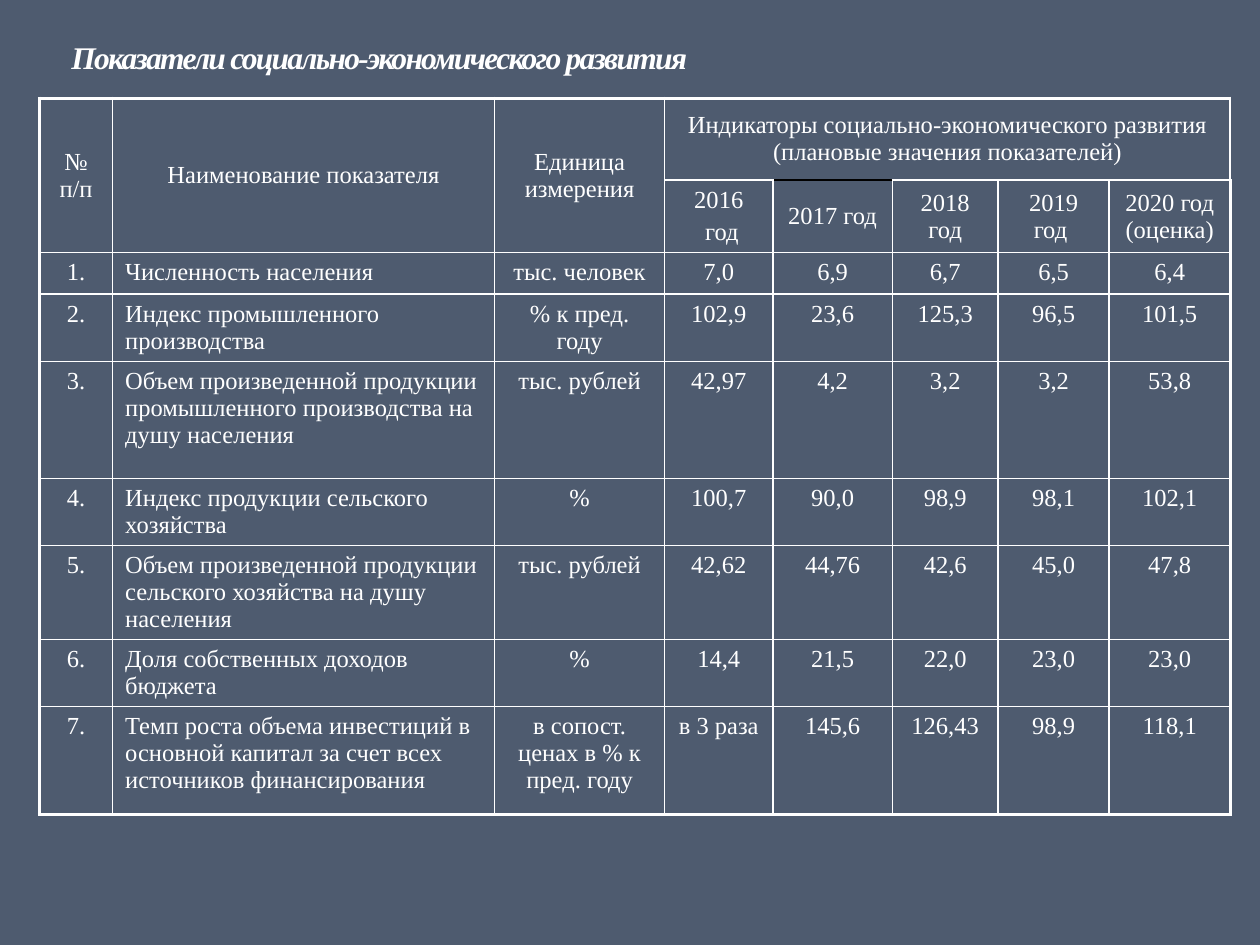
"""Build a slide with a table of social and economic development indicators."""
from lxml import etree
from pptx import Presentation
from pptx.dml.color import RGBColor
from pptx.enum.text import MSO_ANCHOR, MSO_AUTO_SIZE, PP_ALIGN
from pptx.oxml.ns import qn
from pptx.util import Cm, Pt

CENTER, LEFT = PP_ALIGN.CENTER, PP_ALIGN.LEFT
MIDDLE, TOP = MSO_ANCHOR.MIDDLE, MSO_ANCHOR.TOP
FONT = "Times New Roman"
COLORS = {"background": "4E5B6F", "text": "FFFFFF", "border": "FFFFFF", "accent": "000000"}
THIN, THICK = 1, 2.25

COLUMN_WIDTHS = [1.47, 7.7, 3.43, 2.18, 2.41, 2.13, 2.24, 2.44]
ROW_HEIGHTS = [1.65, 1.46, 0.84, 1.36, 2.36, 1.3, 1.83, 1.3, 2.18]
HEADER_ROWS = 2
ROWS = [
    ["№ п/п", "Наименование показателя", "Единица измерения",
     "Индикаторы социально-экономического развития (плановые значения показателей)",
     "", "", "", ""],
    ["", "", "", "2016\n год", "2017 год", "2018 год", "2019 год ", "2020 год (оценка)"],
    ["1.", "Численность населения", "тыс. человек", "7,0", "6,9", "6,7", "6,5", "6,4"],
    ["2.", "Индекс промышленного производства", "% к пред. году",
     "102,9", "23,6", "125,3", "96,5", "101,5"],
    ["3.", "Объем произведенной продукции промышленного производства на душу населения",
     "тыс. рублей", "42,97", "4,2", "3,2", "3,2", "53,8"],
    ["4.", "Индекс продукции сельского хозяйства", "%",
     "100,7", "90,0", "98,9", "98,1", "102,1"],
    ["5.", "Объем произведенной продукции сельского хозяйства на душу населения",
     "тыс. рублей", "42,62", "44,76", "42,6", "45,0", "47,8"],
    ["6.", "Доля собственных доходов бюджета", "%", "14,4", "21,5", "22,0", "23,0", "23,0"],
    ["7.", "Темп роста объема инвестиций в основной капитал за счет всех источников финансирования",
     "в сопост. ценах в % к пред. году", "в 3 раза", "145,6", "126,43", "98,9", "118,1"],
]


def style_paragraph(paragraph, size, alignment):
    paragraph.alignment = alignment
    paragraph.font.name = FONT
    paragraph.font.size = Pt(size)
    paragraph.font.color.rgb = RGBColor.from_string(COLORS["text"])


def set_borders(cell, borders):
    properties = cell._tc.get_or_add_tcPr()
    for position, (side, (width, color)) in enumerate(borders.items()):
        line = etree.Element(qn(f"a:ln{side}"), w=str(Pt(width)))
        fill = etree.SubElement(line, qn("a:solidFill"))
        etree.SubElement(fill, qn("a:srgbClr"), val=color)
        properties.insert(position, line)


presentation = Presentation()
presentation.slide_width, presentation.slide_height = Cm(25.4), Cm(19.05)
slide = presentation.slides.add_slide(presentation.slide_layouts[5])
slide.background.fill.solid()
slide.background.fill.fore_color.rgb = RGBColor.from_string(COLORS["background"])

title = slide.shapes.title
title.left, title.top, title.width, title.height = Cm(0), Cm(0.58), Cm(15.29), Cm(1.12)
title.text_frame.text = "Показатели социально-экономического развития"
title.text_frame.vertical_anchor = MIDDLE
title.text_frame.auto_size = MSO_AUTO_SIZE.NONE
title_paragraph = title.text_frame.paragraphs[0]
style_paragraph(title_paragraph, 18, CENTER)
title_paragraph.font.bold = True
title_paragraph.font.italic = True
title_paragraph.runs[0]._r.get_or_add_rPr().set("spc", "-100")

table = slide.shapes.add_table(
    len(ROWS), len(COLUMN_WIDTHS), Cm(0.8), Cm(1.98),
    Cm(sum(COLUMN_WIDTHS)), Cm(sum(ROW_HEIGHTS))).table
table.first_row = False
table.horz_banding = False
for column, width in zip(table.columns, COLUMN_WIDTHS):
    column.width = Cm(width)
for row, height in zip(table.rows, ROW_HEIGHTS):
    row.height = Cm(height)
for column_index in range(3):
    table.cell(0, column_index).merge(table.cell(1, column_index))
table.cell(0, 3).merge(table.cell(0, 7))

last_row, last_column = len(ROWS) - 1, len(COLUMN_WIDTHS) - 1
for row_index, values in enumerate(ROWS):
    for column_index, value in enumerate(values):
        cell = table.cell(row_index, column_index)
        cell.text = value
        cell.vertical_anchor = MIDDLE if row_index < HEADER_ROWS else TOP
        is_name = column_index == 1 and row_index >= HEADER_ROWS
        for paragraph_index, paragraph in enumerate(cell.text_frame.paragraphs):
            style_paragraph(paragraph, 14, LEFT if is_name else CENTER)
            if paragraph_index:
                paragraph.space_before = Pt(2.8)
        cell.fill.background()
        outer_sides = {"L": column_index == 0, "R": column_index == last_column,
                       "T": row_index == 0, "B": row_index == last_row}
        borders = {side: (THICK if outer else THIN, COLORS["border"])
                   for side, outer in outer_sides.items()}
        if column_index == 4 and row_index < HEADER_ROWS:
            borders["B" if row_index == 0 else "T"] = (THIN, COLORS["accent"])
        set_borders(cell, borders)

presentation.save("out.pptx")
